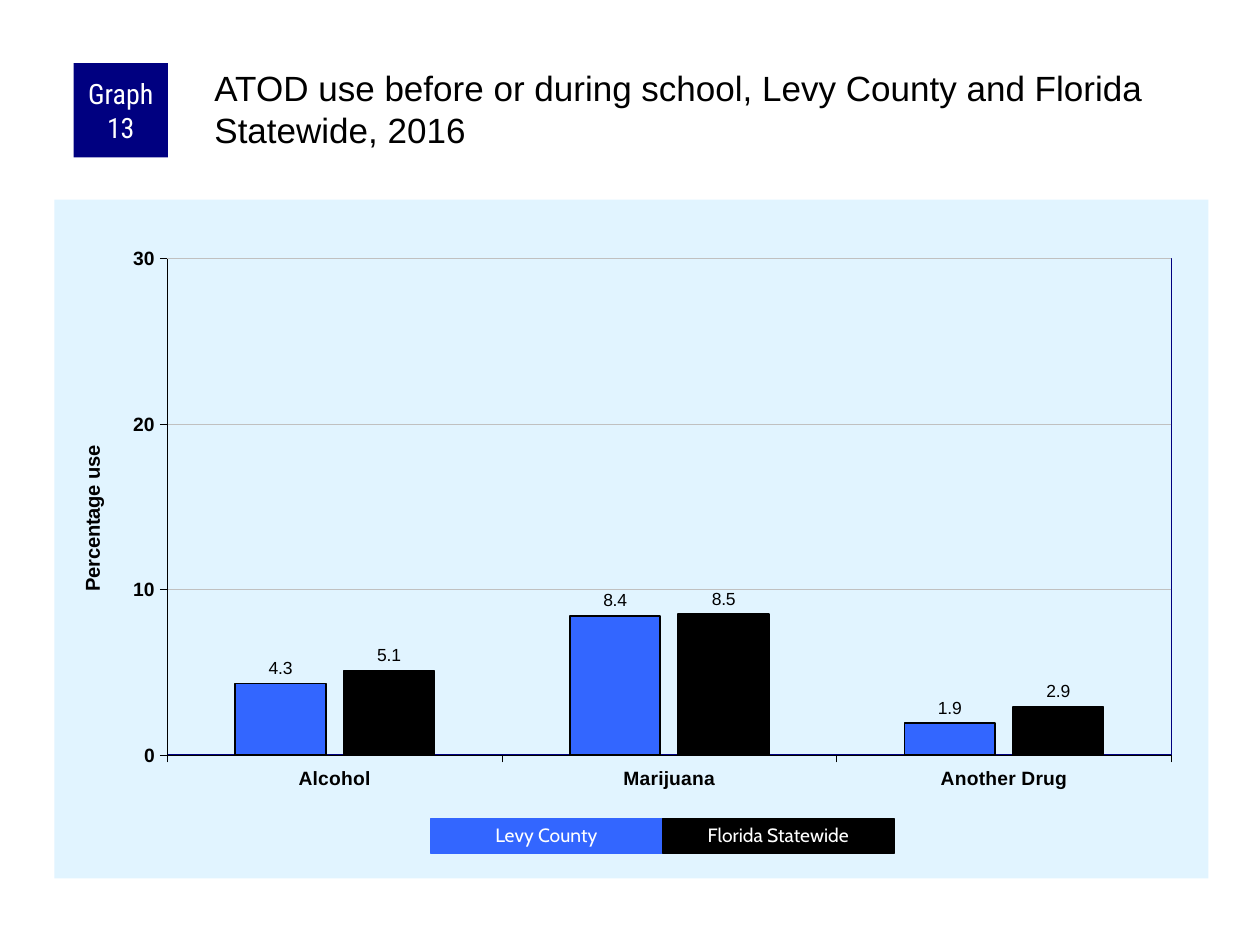
from lxml import etree
from pptx import Presentation
from pptx.chart.data import CategoryChartData
from pptx.dml.color import RGBColor
from pptx.enum.chart import XL_CHART_TYPE, XL_LABEL_POSITION, XL_TICK_MARK
from pptx.enum.shapes import MSO_SHAPE
from pptx.enum.text import MSO_ANCHOR, MSO_AUTO_SIZE, PP_ALIGN
from pptx.oxml import parse_xml
from pptx.util import Pt

COLUMN = XL_CHART_TYPE.COLUMN_CLUSTERED
ABOVE = XL_LABEL_POSITION.OUTSIDE_END
OUT = XL_TICK_MARK.OUTSIDE
RECT = MSO_SHAPE.RECTANGLE
TOP, MIDDLE = MSO_ANCHOR.TOP, MSO_ANCHOR.MIDDLE
LEFT, CENTER = PP_ALIGN.LEFT, PP_ALIGN.CENTER
FIXED = MSO_AUTO_SIZE.NONE

HUES = {"navy": "000080", "blue": "3366FF", "black": "000000",
        "white": "FFFFFF", "pale": "E1F4FF", "grid": "C0C0C0"}
NS_C = "http://schemas.openxmlformats.org/drawingml/2006/chart"
NS_A = "http://schemas.openxmlformats.org/drawingml/2006/main"
C = "{%s}" % NS_C

DRUGS = ["Alcohol", "Marijuana", "Another Drug"]
AREAS = [("Levy County", "blue", (4.3, 8.4, 1.9)),
         ("Florida Statewide", "black", (5.1, 8.5, 2.9))]


def hue(name):
    return RGBColor.from_string(HUES[name])


def style(font, face, size, color, bold=False):
    font.name, font.size, font.bold = face, Pt(size), bold
    font.color.rgb = hue(color)


def rule(line, color, width):
    line.color.rgb = hue(color)
    line.width = Pt(width)


def write(frame, text, face, size, color, align, anchor, pads):
    frame.word_wrap = True
    frame.auto_size = FIXED
    frame.vertical_anchor = anchor
    frame.margin_left, frame.margin_top, frame.margin_right, frame.margin_bottom = map(Pt, pads)
    para = frame.paragraphs[0]
    para.alignment = align
    run = para.add_run()
    run.text = text
    style(run.font, face, size, color)
    return para


def add_block(slide, box, color):
    block = slide.shapes.add_shape(RECT, *map(Pt, box))
    block.shadow.inherit = False
    block.fill.solid()
    block.fill.fore_color.rgb = hue(color)
    block.line.fill.background()
    return block


def area_props(fill, line):
    """Shape properties for a chart area or a plot area."""
    return parse_xml(f'<c:spPr xmlns:c="{NS_C}" xmlns:a="{NS_A}">{fill}<a:ln w="12700">{line}</a:ln></c:spPr>')


def solid(name):
    return f'<a:solidFill><a:srgbClr val="{HUES[name]}"/></a:solidFill>'


def place_plot(chart, parts):
    """Fix the inner plot area and colour both chart areas."""
    plot = chart._chartSpace.chart.plotArea
    for old in plot.findall(C + "layout"):
        plot.remove(old)
    layout = etree.Element(C + "layout")
    manual = etree.SubElement(layout, C + "manualLayout")
    rows = [("layoutTarget", "inner"), ("xMode", "edge"), ("yMode", "edge")]
    for tag, val in rows + list(zip("xywh", parts)):
        etree.SubElement(manual, C + tag).set("val", str(val))
    plot.insert(0, layout)
    plot.append(area_props("<a:noFill/>", solid("navy")))
    chart._chartSpace.chart.addnext(area_props(solid("pale"), "<a:noFill/>"))


def add_graph(slide, box):
    data = CategoryChartData(number_format="0.0")
    data.categories = DRUGS
    for name, _, vals in AREAS:
        data.add_series(name, vals)
    chart = slide.shapes.add_chart(COLUMN, *map(Pt, box), data).chart
    chart.has_title = chart.has_legend = False
    style(chart.font, "Arial", 11.5, "black")
    place_plot(chart, (0.098, 0.087, 0.87, 0.731))

    # Bars and their values
    plot = chart.plots[0]
    plot.vary_by_categories = False
    plot.gap_width, plot.overlap = 150, -20
    for bars, (_, color, _) in zip(plot.series, AREAS):
        bars.format.fill.solid()
        bars.format.fill.fore_color.rgb = hue(color)
        rule(bars.format.line, "black", 1)
        tags = bars.data_labels
        tags.show_value = True
        tags.number_format, tags.number_format_is_linked = "0.0", False
        tags.position = ABOVE
        style(tags.font, "Arial", 10, "black")

    # Axes
    for axis in (chart.category_axis, chart.value_axis):
        axis.major_tick_mark = OUT
        style(axis.tick_labels.font, "Arial", 11, "black", True)
        rule(axis.format.line, "black", 0.25)
    scale = chart.value_axis
    scale.minimum_scale, scale.maximum_scale, scale.major_unit = 0, 30, 10
    scale.tick_labels.number_format = "0"
    scale.tick_labels.number_format_is_linked = False
    rule(scale.major_gridlines.format.line, "grid", 0.25)
    run = scale.axis_title.text_frame.paragraphs[0].add_run()
    run.text = "Percentage use"
    style(run.font, "Arial", 11.5, "black", True)


def add_head(slide, box):
    """Graph number on the left, title on the right."""
    left, top, width, height = box
    side, inset = 54, 78.5
    badge = add_block(slide, (left, top, side, side), "navy")
    write(badge.text_frame, "Graph 13", "Roboto Condensed", 16, "white",
          CENTER, MIDDLE, (3.6, 0, 3.6, 0))
    title = slide.shapes.title
    title.left, title.top = Pt(left + inset), Pt(top)
    title.width, title.height = Pt(width - inset), Pt(height)
    write(title.text_frame, "ATOD use before or during school, Levy County and Florida Statewide, 2016",
          "Arial", 20, "black", LEFT, TOP, (2, 2, 0, 0))


def add_key(slide, box):
    """One coloured label for each area, side by side."""
    left, top, width, height = box
    step = width / len(AREAS)
    for i, (name, color, _) in enumerate(AREAS):
        label = add_block(slide, (left + i * step, top, step, height), color)
        rule(label.line, color, 0.75)
        para = write(label.text_frame, name, "Cabin", 11, "white",
                     CENTER, MIDDLE, (7.2, 3.6, 7.2, 3.6))
        para.line_spacing = 0.9


def main():
    deck = Presentation()
    deck.slide_width, deck.slide_height = Pt(720), Pt(540)
    slide = deck.slides.add_slide(deck.slide_layouts[5])
    add_graph(slide, (31, 114, 659.5, 388))
    add_head(slide, (42, 36, 648.5, 60))
    add_key(slide, (246, 468, 265, 19.5))
    deck.save("out.pptx")


if __name__ == "__main__":
    main()
